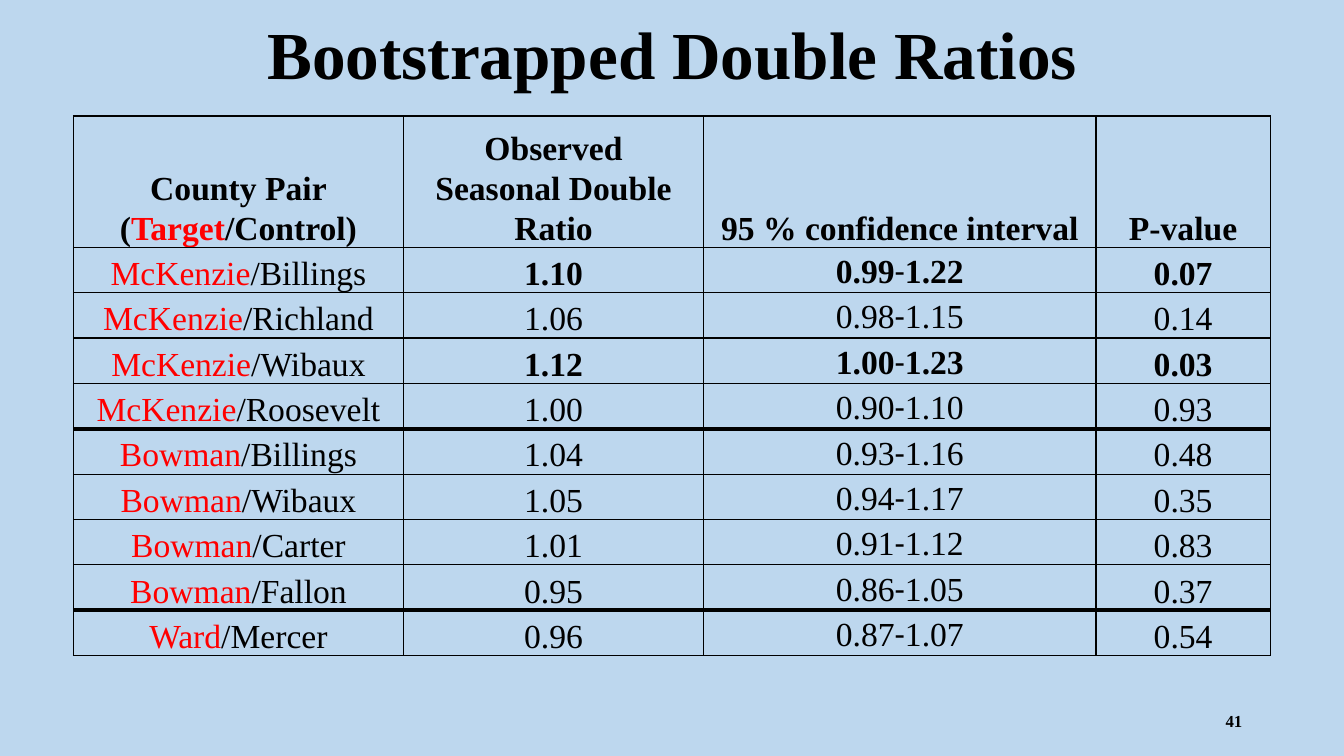
from lxml.etree import SubElement
from pptx import Presentation
from pptx.dml.color import RGBColor
from pptx.enum.text import MSO_ANCHOR, MSO_AUTO_SIZE, PP_ALIGN
from pptx.oxml.ns import qn
from pptx.util import Pt

PX = 9144  # 100 px to the inch
BLACK = RGBColor(0x00, 0x00, 0x00)
RED = RGBColor(0xFF, 0x00, 0x00)
LIGHT_BLUE = RGBColor(0xBD, 0xD7, 0xEE)
SERIF, SANS = "Times New Roman", "Calibri"

TITLE = "Bootstrapped Double Ratios"
PAGE_NUMBER = "41"
HEADERS = ["Observed Seasonal Double Ratio", "95 % confidence interval", "P-value"]
# target, control, double ratio, interval low, interval high, p-value
COUNTY_PAIRS = [
    ("McKenzie", "Billings", "1.10", "0.99", "1.22", "0.07"),
    ("McKenzie", "Richland", "1.06", "0.98", "1.15", "0.14"),
    ("McKenzie", "Wibaux", "1.12", "1.00", "1.23", "0.03"),
    ("McKenzie", "Roosevelt", "1.00", "0.90", "1.10", "0.93"),
    ("Bowman", "Billings", "1.04", "0.93", "1.16", "0.48"),
    ("Bowman", "Wibaux", "1.05", "0.94", "1.17", "0.35"),
    ("Bowman", "Carter", "1.01", "0.91", "1.12", "0.83"),
    ("Bowman", "Fallon", "0.95", "0.86", "1.05", "0.37"),
    ("Ward", "Mercer", "0.96", "0.87", "1.07", "0.54"),
]
COLUMN_WIDTHS = [327, 298, 389, 173]
HEADER_HEIGHT, ROW_HEIGHT = 130, 45
SIGNIFICANT = 0.1


def px(*lengths):
    return [length * PX for length in lengths]


def add_run(paragraph, text, size, bold=False, color=BLACK, name=SERIF):
    run = paragraph.add_run()
    run.text = text
    font = run.font
    font.size, font.bold, font.name = Pt(size), bold, name
    font.color.rgb = color


def fill_cell(cell, lines, margins):
    """Write lines, each a list of (text, bold, colour, font) runs."""
    cell.vertical_anchor = MSO_ANCHOR.BOTTOM
    side, top = px(*margins)
    cell.margin_left = cell.margin_right = side
    cell.margin_top, cell.margin_bottom = top, 0
    for index, runs in enumerate(lines):
        text_frame = cell.text_frame
        paragraph = text_frame.add_paragraph() if index else text_frame.paragraphs[0]
        paragraph.alignment = PP_ALIGN.CENTER
        paragraph.line_spacing = 1.07
        for text, bold, color, name in runs:
            add_run(paragraph, text, 24, bold, color, name)


def set_borders(cell, top, bottom):
    """Draw black borders; top and bottom widths are in points."""
    properties = cell._tc.get_or_add_tcPr()
    for side, width in (("L", 1), ("R", 1), ("T", top), ("B", bottom)):
        line = SubElement(properties, qn(f"a:ln{side}"), w=str(Pt(width)))
        SubElement(SubElement(line, qn("a:solidFill")), qn("a:srgbClr"), val=str(BLACK))


def table_rows():
    header = [[[("County Pair", True, BLACK, SERIF)],
               [("(", True, BLACK, SERIF), ("Target", True, RED, SERIF),
                ("/Control)", True, BLACK, SERIF)]]]
    header += [[[(text, True, BLACK, SERIF)]] for text in HEADERS]
    rows = [header]
    for target, control, ratio, low, high, p_value in COUNTY_PAIRS:
        bold = float(p_value) < SIGNIFICANT
        rows.append([
            [[(target, False, RED, SERIF), ("/" + control, False, BLACK, SERIF)]],
            [[(ratio, bold, BLACK, SERIF)]],
            [[(low, bold, BLACK, SERIF), ("-", False, BLACK, SANS), (high, bold, BLACK, SERIF)]],
            [[(p_value, bold, BLACK, SERIF)]],
        ])
    return rows


def add_ratio_table(slide):
    rows = table_rows()
    height = HEADER_HEIGHT + ROW_HEIGHT * len(COUNTY_PAIRS)
    table = slide.shapes.add_table(len(rows), len(COLUMN_WIDTHS),
                                   *px(73, 115, sum(COLUMN_WIDTHS), height)).table
    table.first_row = table.horz_banding = False
    for column, width in zip(table.columns, COLUMN_WIDTHS):
        column.width = width * PX

    targets = [pair[0] for pair in COUNTY_PAIRS]
    # A thick rule separates one target county from the next
    rules = [1, 1] + [1 if a == b else 3 for a, b in zip(targets, targets[1:])] + [1]
    for row_index, row in enumerate(rows):
        table.rows[row_index].height = (ROW_HEIGHT if row_index else HEADER_HEIGHT) * PX
        for column_index, lines in enumerate(row):
            cell = table.cell(row_index, column_index)
            is_label = row_index == 0 or column_index == 0
            fill_cell(cell, lines, (17, 2) if is_label else (7, 0))
            set_borders(cell, rules[row_index], rules[row_index + 1])
            cell.fill.background()


def add_title(slide):
    title = slide.shapes.title
    title.left, title.top, title.width, title.height = px(92, 0, 1150, 115)
    text_frame = title.text_frame
    text_frame.auto_size = MSO_AUTO_SIZE.NONE
    text_frame.vertical_anchor = MSO_ANCHOR.MIDDLE
    paragraph = text_frame.paragraphs[0]
    paragraph.alignment = PP_ALIGN.CENTER
    paragraph.line_spacing = 0.9
    add_run(paragraph, TITLE, 48, True)


def add_page_number(slide):
    text_frame = slide.shapes.add_textbox(*px(942, 695, 300, 40)).text_frame
    text_frame.word_wrap = True
    text_frame.vertical_anchor = MSO_ANCHOR.MIDDLE
    paragraph = text_frame.paragraphs[0]
    paragraph.alignment = PP_ALIGN.RIGHT
    paragraph.space_after = Pt(6)
    add_run(paragraph, PAGE_NUMBER, 12, True)


def main():
    presentation = Presentation()
    presentation.slide_width, presentation.slide_height = px(1333, 750)
    slide = presentation.slides.add_slide(presentation.slide_layouts[5])
    slide.background.fill.solid()
    slide.background.fill.fore_color.rgb = LIGHT_BLUE
    add_title(slide)
    add_page_number(slide)
    add_ratio_table(slide)
    presentation.save("out.pptx")


if __name__ == "__main__":
    main()
